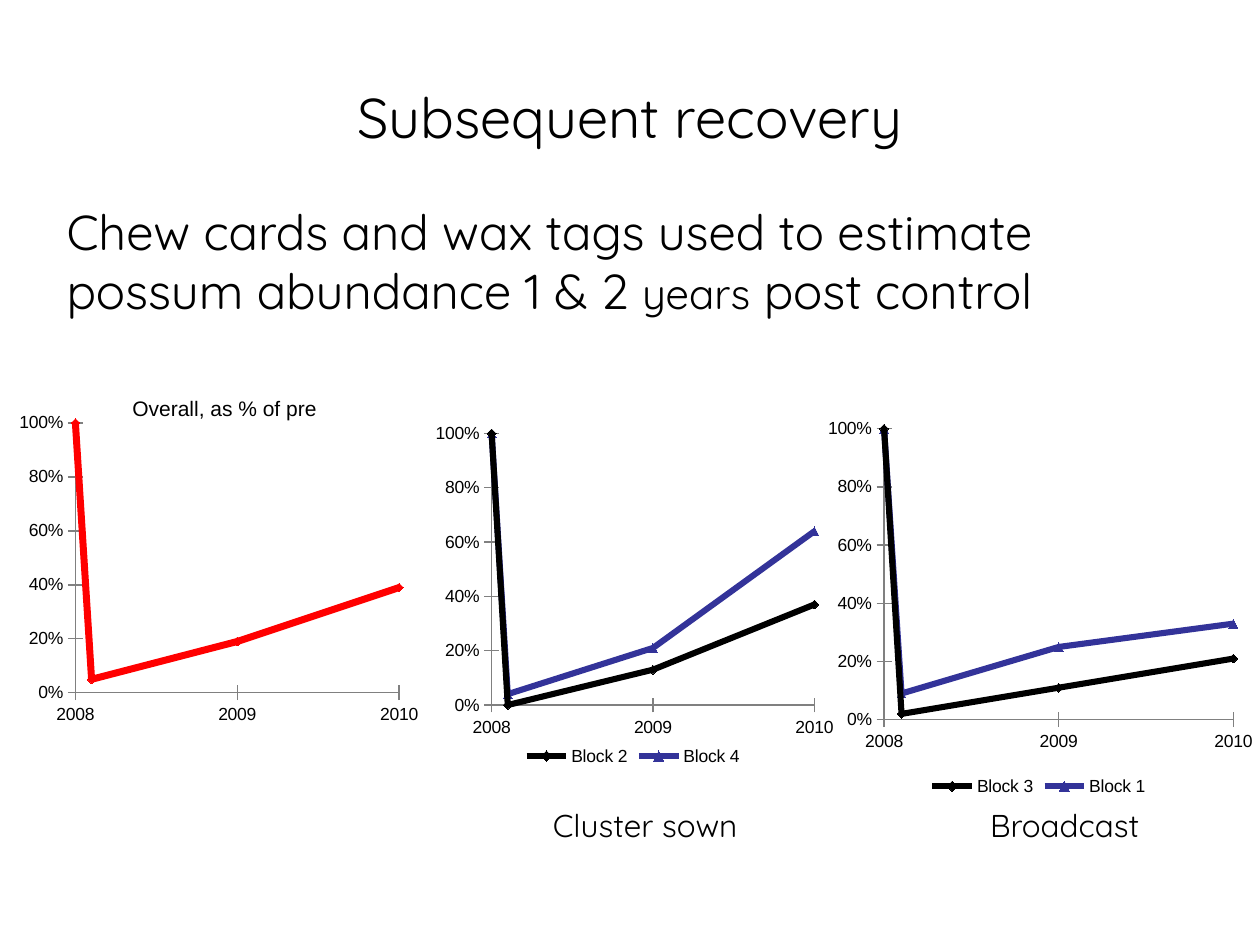
from lxml import etree
from pptx import Presentation
from pptx.chart.data import XyChartData
from pptx.dml.color import RGBColor
from pptx.enum import chart as kinds, text
from pptx.oxml.ns import qn
from pptx.util import Inches, Pt

BLACK = RGBColor(0x00, 0x00, 0x00)
RED = RGBColor(0xFF, 0x00, 0x00)
BLUE = RGBColor(0x33, 0x33, 0x99)
GRAY = RGBColor(0x80, 0x80, 0x80)
DIAMOND = kinds.XL_MARKER_STYLE.DIAMOND
TRIANGLE = kinds.XL_MARKER_STYLE.TRIANGLE
YEARS = (2008, 2008.1, 2009, 2010)


def style_font(font, size, name="Arial"):
    """Give a font its size, typeface and black colour."""
    font.size, font.name, font.bold = Pt(size), name, False
    font.color.rgb = BLACK


def place(shape, area):
    """Position a shape from left, top, width and height in inches."""
    shape.left, shape.top, shape.width, shape.height = map(Inches, area)


def add_text(page, area, spans, wrap=True):
    """Add a text box holding one paragraph of (wording, size) spans."""
    box = page.shapes.add_textbox(*map(Inches, area))
    box.text_frame.word_wrap = wrap
    para = box.text_frame.paragraphs[0]
    for wording, size in spans:
        span = para.add_run()
        span.text = wording
        style_font(span.font, size, "Quicksand")


def set_layout(parent, index, **fractions):
    """Fix a chart part's place as fractions of the chart area."""
    for old in parent.findall(qn("c:layout")):
        parent.remove(old)
    layout = etree.Element(qn("c:layout"))
    manual = etree.SubElement(layout, qn("c:manualLayout"))
    settings = {"xMode": "edge", "yMode": "edge", **fractions}
    if "w" in fractions:
        settings = {"layoutTarget": "inner", **settings}
    for tag, value in settings.items():
        etree.SubElement(manual, qn(f"c:{tag}")).set("val", str(value))
    parent.insert(index, layout)


def style_axis(axis, low, high, step, number_format):
    """Set an axis's scale, ticks, labels and line."""
    axis.minimum_scale, axis.maximum_scale, axis.major_unit = low, high, step
    axis.has_major_gridlines = False
    axis.major_tick_mark = kinds.XL_TICK_MARK.CROSS
    axis.minor_tick_mark = kinds.XL_TICK_MARK.NONE
    axis.tick_labels.number_format = number_format
    axis.tick_labels.number_format_is_linked = False
    axis.format.line.color.rgb = GRAY
    axis.format.line.width = Pt(0.75)


def style_series(series, color, marker, width):
    """Draw a series as a straight thick line with small markers."""
    series.smooth = False
    series.format.line.color.rgb = color
    series.format.line.width = Pt(width)
    series.marker.style, series.marker.size = marker, 5
    series.marker.format.fill.solid()
    series.marker.format.fill.fore_color.rgb = color
    series.marker.format.line.color.rgb = color


def add_recovery_chart(page, area, plot_area, lines, width=3.5):
    """Add a scatter chart of abundance relative to pre-control levels."""
    data = XyChartData(number_format="0%")
    for name, values, _, _ in lines:
        points = data.add_series(name)
        for year, value in zip(YEARS, values):
            points.add_data_point(year, value)
    chart = page.shapes.add_chart(
        kinds.XL_CHART_TYPE.XY_SCATTER_LINES, *map(Inches, area), data).chart
    style_font(chart.font, 10)
    chart.has_title = False
    chart.plots[0].vary_by_categories = False
    style_axis(chart.category_axis, 2008, 2010, 1, "General")
    style_axis(chart.value_axis, 0, 1, 0.2, "0%")
    for series, (_, _, color, marker) in zip(chart.plots[0].series, lines):
        style_series(series, color, marker, width)
    chart.has_legend = len(lines) > 1
    if chart.has_legend:
        chart.legend.position = kinds.XL_LEGEND_POSITION.BOTTOM
        chart.legend.include_in_layout = False
    plot = chart._chartSpace.find(f".//{qn('c:plotArea')}")
    set_layout(plot, 0, **dict(zip("xywh", plot_area)))
    return chart


def add_chart_title(chart, wording):
    """Give a chart its heading."""
    frame = chart.chart_title.text_frame
    frame.text = wording
    style_font(frame.paragraphs[0].runs[0].font, 12)
    set_layout(chart._chartSpace.find(f".//{qn('c:title')}"), 1, x=0.29, y=0.05)


def add_title(page, wording):
    """Fill and format the title placeholder."""
    title = page.shapes.title
    place(title, (0.5, 0.3, 9, 1.25))
    title.text_frame.text = wording
    title.text_frame.vertical_anchor = text.MSO_ANCHOR.MIDDLE
    para = title.text_frame.paragraphs[0]
    para.alignment = text.PP_ALIGN.CENTER
    style_font(para.runs[0].font, 32, "Quicksand")


def main():
    """Build the recovery slide."""
    deck = Presentation()
    deck.slide_width, deck.slide_height = Inches(10), Inches(7.5)
    page = deck.slides.add_slide(deck.slide_layouts[5])
    add_title(page, "Subsequent recovery")
    add_text(page, (0.43, 1.55, 9.37, 1.35), [
        ("Chew cards and wax tags used to estimate possum abundance 1 & 2 ", 28),
        ("years", 24), (" post control", 28)])

    heading = "Overall, as % of pre"
    overall = add_recovery_chart(
        page, (0, 2.96, 3.52, 3.06), (0.17, 0.13, 0.73, 0.7),
        [(heading, (1, 0.05, 0.19, 0.39), RED, DIAMOND)], width=4)
    add_chart_title(overall, heading)
    add_recovery_chart(
        page, (3.27, 3.04, 3.51, 3.08), (0.18, 0.13, 0.73, 0.7),
        [("Block 2", (1, 0, 0.13, 0.37), BLACK, DIAMOND),
         ("Block 4", (1, 0.04, 0.21, 0.64), BLUE, TRIANGLE)])
    add_recovery_chart(
        page, (6.49, 3.28, 3.51, 3.08), (0.15, 0.04, 0.79, 0.75),
        [("Block 3", (1, 0.02, 0.11, 0.21), BLACK, DIAMOND),
         ("Block 1", (1, 0.09, 0.25, 0.33), BLUE, TRIANGLE)])

    add_text(page, (4.29, 6.35, 1.81, 0.4), [("Cluster sown", 18)], wrap=False)
    add_text(page, (7.76, 6.35, 1.47, 0.4), [("Broadcast", 18)], wrap=False)
    deck.save("out.pptx")


if __name__ == "__main__":
    main()
